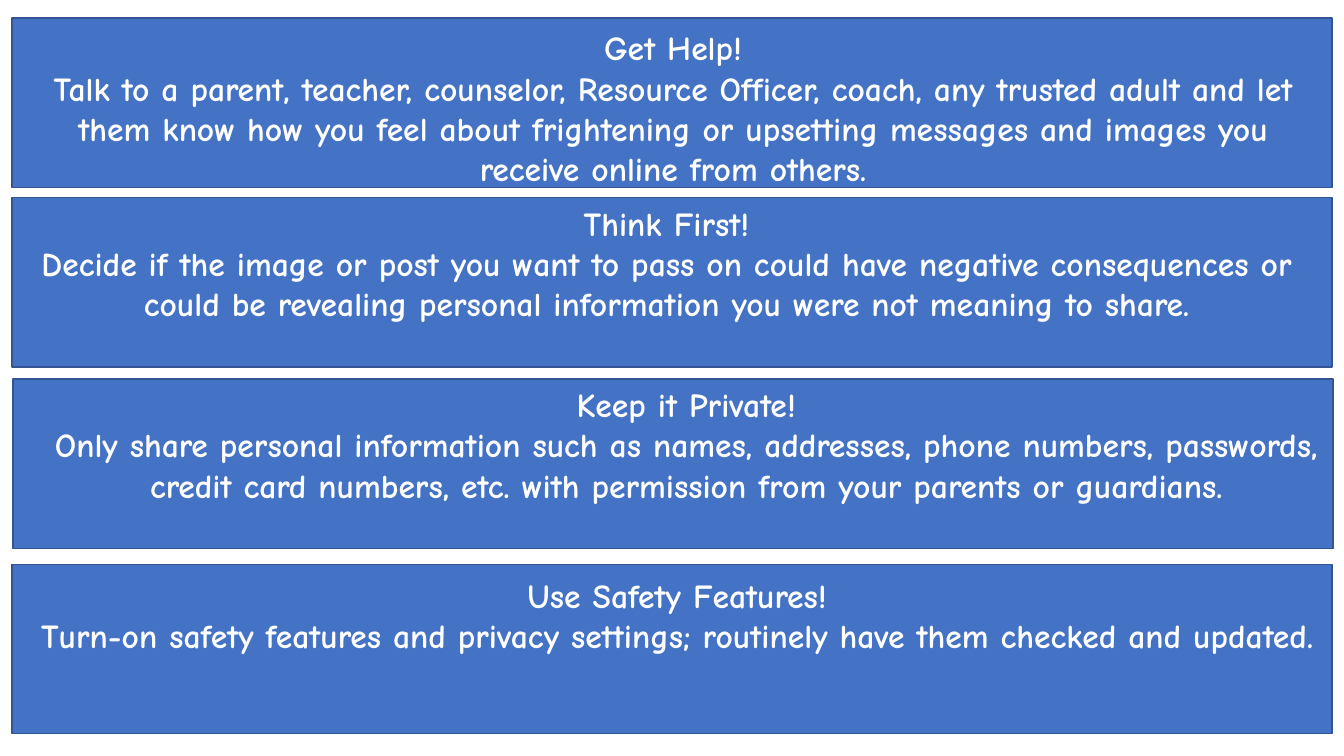
from pptx import Presentation
from pptx import util as u
from pptx.dml.color import RGBColor
from pptx.enum import shapes, text

FONT = {"name": "Comic Neue", "size": u.Pt(24), "bold": True}
FRAME = {"word_wrap": True, "auto_size": text.MSO_AUTO_SIZE.NONE,
         "vertical_anchor": text.MSO_ANCHOR.TOP}
WIDE, HIGH = 13.09, 1.68
TIPS = [
    ((0.12, 0.18), (0.01, 0.04, 13.09, 1.72), "Get Help!",
     "Talk to a parent, teacher, counselor, Resource Officer, coach, any trusted adult "
     "and let them know how you feel about frightening or upsetting messages and images "
     "you receive online from others."),
    ((0.12, 1.96), (0.01, 0, 12.96, 2.26), "Think First!",
     "Decide if the image or post you want to pass on could have negative consequences "
     "or could be revealing personal information you were not meaning to share."),
    ((0.13, 3.76), (0.25, 0, 12.85, 1.72), "Keep it Private!",
     "Only share personal information such as names, addresses, phone numbers, passwords, "
     "credit card numbers, etc. with permission from your parents or guardians."),
    ((0.12, 5.6), (0.1, 0.05, 12.99, 1.31), "Use Safety Features!",
     "Turn-on safety features and privacy settings; routinely have them checked and updated."),
]


def color(code):
    """Turn a hex string into a colour."""
    return RGBColor.from_string(code)


def style(item, values):
    """Set each format value on an item."""
    for key, value in values.items():
        setattr(item, key, value)


def panel(slide, left, top):
    """Draw the blue panel behind a tip."""
    box = slide.shapes.add_shape(shapes.MSO_SHAPE.RECTANGLE,
                                 *map(u.Inches, (left, top, WIDE, HIGH)))
    box.shadow.inherit = False
    box.fill.solid()
    box.fill.fore_color.rgb = color("4472C4")
    box.line.color.rgb = color("325491")
    box.line.width = u.Pt(1)


def words(slide, left, top, wide, high, lines):
    """Write a tip's title and advice, one paragraph each."""
    box = slide.shapes.add_textbox(*map(u.Inches, (left, top, wide, high)))
    frame = box.text_frame
    style(frame, FRAME)
    frame.text = "\n".join(lines)
    for para in frame.paragraphs:
        para.alignment = text.PP_ALIGN.CENTER
        for run in para.runs:
            style(run.font, FONT)
            run.font.color.rgb = color("FFFFFF")


def main():
    """Build the slide of safety tips and save it."""
    deck = Presentation()
    style(deck, {"slide_width": u.Inches(13.33), "slide_height": u.Inches(7.5)})
    slide = deck.slides.add_slide(deck.slide_layouts[6])
    for (left, top), _, *_ in TIPS:
        panel(slide, left, top)
    for (left, top), (right, down, wide, high), *lines in TIPS:
        words(slide, left + right, top + down, wide, high, lines)
    deck.save("out.pptx")


if __name__ == "__main__":
    main()
